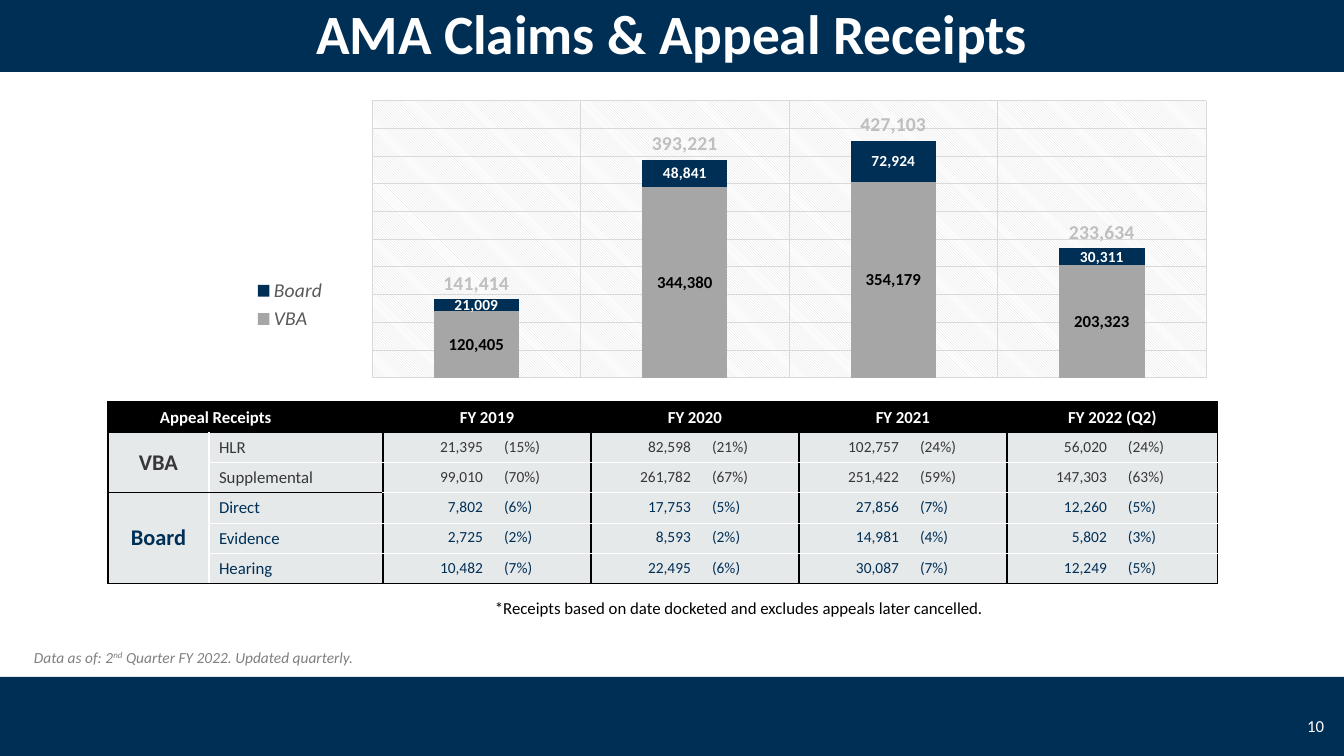
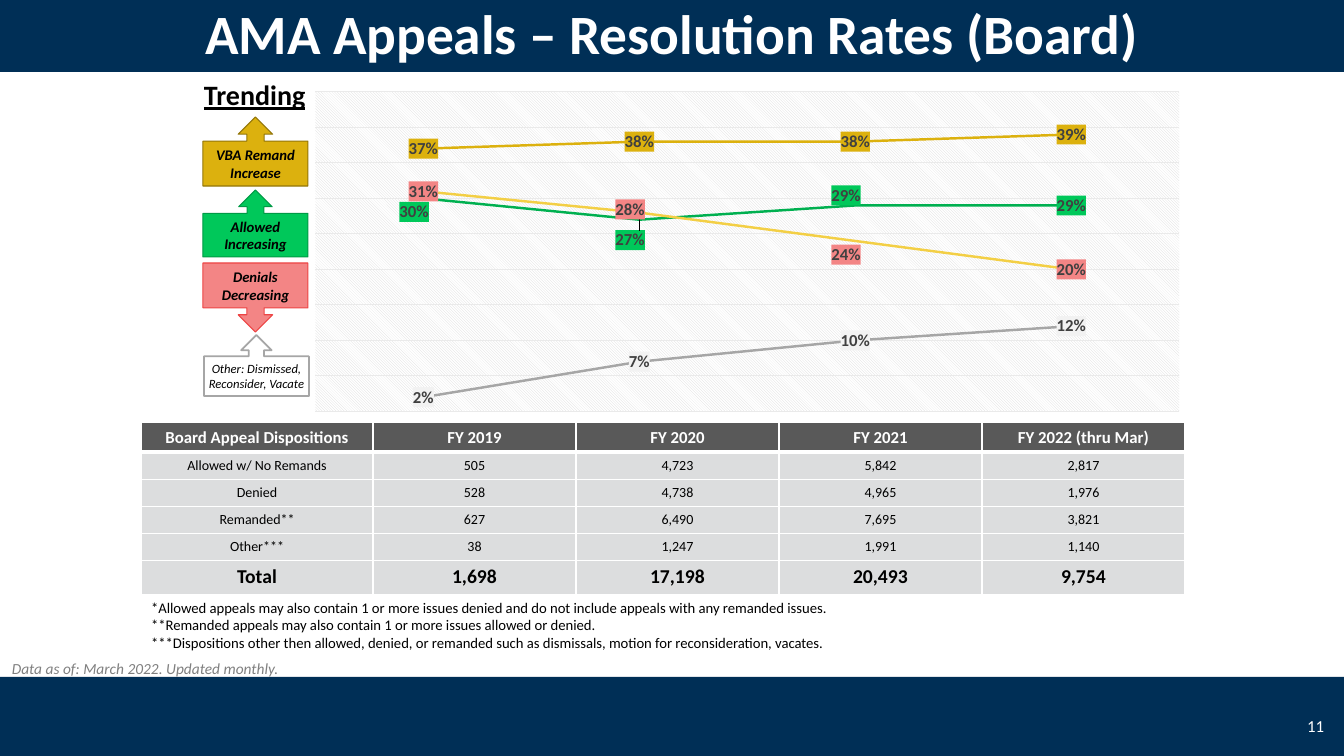
from dataclasses import dataclass
from typing import NamedTuple

from pptx import Presentation
from pptx import util as u
from pptx.chart.data import CategoryChartData
from pptx.dml.color import RGBColor
from pptx.enum import chart as ec, shapes, text
from pptx.oxml import ns, parse_xml

# Shared look
FONT = "Calibri"
NAVY, WHITE, BLACK, GRAY = "002F56", "FFFFFF", "000000", "A6A6A6"
GOLD, GREEN, ROSE = "DCB10E", "00C85A", "F38585"
WIDTH, HEIGHT = 1344, 756
BAND_HEIGHT, BAND_TOPS = 80, (-8, 677)
SCALE = 12192000 / WIDTH
CENTER, LEFT, RIGHT = text.PP_ALIGN.CENTER, text.PP_ALIGN.LEFT, text.PP_ALIGN.RIGHT
MIDDLE = text.MSO_ANCHOR.MIDDLE


class Area(NamedTuple):
    left: int
    top: int
    width: int
    height: int


class Style(NamedTuple):
    size: float
    color: str = BLACK
    bold: bool = False
    italic: bool = False
    underline: bool = False


@dataclass
class Callout:
    area: Area
    label: str
    fill: str
    line: str
    style: Style = Style(10.5, bold=True, italic=True)
    weight: float = 0.75
    down: bool = False


@dataclass
class Series:
    name: str
    values: tuple
    color: str
    label: Style
    label_fill: str = ""
    shifts: tuple = ()  # (point, x, y) as shares of the chart


def px(length: float) -> int:
    return round(length * SCALE)


def place(area: Area) -> list:
    return [px(length) for length in area]


def rgb(color: str) -> RGBColor:
    return RGBColor.from_string(color)


def xml(markup: str):
    head, rest = markup.split(">", 1) if not markup.endswith("/>") else (markup[:-2], "")
    close = ">" if rest else "/>"
    return parse_xml(f"{head} {ns.nsdecls('a', 'c')}{close}{rest}")


def style_font(font, style: Style) -> None:
    font.name, font.size = FONT, u.Pt(style.size)
    font.bold, font.italic = style.bold, style.italic
    font.color.rgb = rgb(style.color)
    if style.underline:
        font.underline = True


def format_text(frame, style: Style, align=LEFT) -> None:
    for para in frame.paragraphs:
        para.alignment = align
        for span in para.runs:
            style_font(span.font, style)


def fill_shape(shape, fill: str, line: str = "", weight: float = 0.75) -> None:
    shape.shadow.inherit = False
    shape.fill.solid()
    shape.fill.fore_color.rgb = rgb(fill)
    if line:
        shape.line.color.rgb, shape.line.width = rgb(line), u.Pt(weight)
    else:
        shape.line.fill.background()


def add_text(page, area: Area, words: str, style: Style, align=LEFT):
    box = page.shapes.add_textbox(*place(area))
    box.text_frame.word_wrap = True
    box.text_frame.text = words
    format_text(box.text_frame, style, align)
    return box


def add_bands(page, layout) -> None:
    for top in BAND_TOPS:
        band = page.shapes.add_shape(shapes.MSO_SHAPE.RECTANGLE,
                                     *place(Area(0, top, WIDTH, BAND_HEIGHT)))
        fill_shape(band, NAVY)
        layout.shapes.element.insert(2, band.element)


def add_page(deck, layout, title: str, number: int):
    page = deck.slides.add_slide(layout)
    head = page.shapes.title
    head.left, head.top, head.width, head.height = place(
        Area(0, BAND_TOPS[0], WIDTH, BAND_HEIGHT))
    head.text_frame.text = title
    head.text_frame.auto_size = text.MSO_AUTO_SIZE.NONE
    head.text_frame.vertical_anchor = MIDDLE
    format_text(head.text_frame, Style(39.6, WHITE, True), CENTER)
    box = add_text(page, Area(1277, 706, 57, 40), str(number), Style(12, WHITE), RIGHT)
    box.text_frame.vertical_anchor = MIDDLE
    return page


# Charts
def manual_layout(x: float, y: float, w: float = 0, h: float = 0, inner: bool = False):
    target = '<c:layoutTarget val="inner"/>' if inner else ""
    modes = '<c:xMode val="edge"/><c:yMode val="edge"/>' if w else ""
    size = f'<c:w val="{w}"/><c:h val="{h}"/>' if w else ""
    return xml(f'<c:layout><c:manualLayout>{target}{modes}<c:x val="{x}"/>'
               f'<c:y val="{y}"/>{size}</c:manualLayout></c:layout>')


def solid(color: str) -> str:
    return f'<a:solidFill><a:srgbClr val="{color}"/></a:solidFill>'


def drop_layout(element) -> None:
    for layout in element.xpath("c:layout"):
        element.remove(layout)


def add_chart(page, kind, area: Area, rows: list, number_format: str, top: float,
              step: float, plot_box: tuple, grid: str):
    data = CategoryChartData(number_format=number_format)
    data.categories = ["1", "2", "3", "4"]
    for row in rows:
        data.add_series(row.name, row.values)
    chart = page.shapes.add_chart(kind, *place(area), data).chart
    chart.has_title = chart.has_legend = False
    style_font(chart.font, Style(10))
    chart.plots[0].vary_by_categories = False
    values = chart.value_axis
    values.minimum_scale, values.maximum_scale, values.major_unit = 0, top, step
    values.major_gridlines.format.line.color.rgb = rgb(grid)
    values.major_gridlines.format.line.width = u.Pt(0.75)
    values.visible = chart.category_axis.visible = False
    plot_area = chart.element.xpath("c:chart/c:plotArea")[0]
    drop_layout(plot_area)
    plot_area.insert(0, manual_layout(*plot_box, inner=True))
    plot_area.append(xml(
        '<c:spPr><a:pattFill prst="ltDnDiag"><a:fgClr><a:srgbClr val="D9D9D9"/></a:fgClr>'
        '<a:bgClr><a:srgbClr val="FFFFFF"/></a:bgClr></a:pattFill></c:spPr>'))
    chart.element.xpath("c:chart")[0].addnext(
        xml(f"<c:spPr>{solid(WHITE)}<a:ln><a:noFill/></a:ln></c:spPr>"))
    for series, row in zip(chart.plots[0].series, rows):
        labels = series.data_labels
        labels.show_value = True
        labels.number_format, labels.number_format_is_linked = number_format, False
        labels.position = ec.XL_LABEL_POSITION.CENTER
        style_font(labels.font, row.label)
    return chart


def add_receipts_chart(page) -> None:
    rows = [
        Series("VBA", (120405, 344380, 354179, 203323), GRAY, Style(12, bold=True)),
        Series("Board", (21009, 48841, 72924, 30311), NAVY, Style(11, WHITE, True)),
        Series("Series 3", (141414, 393221, 427103, 233634), WHITE, Style(14, "BFBFBF", True)),
    ]
    chart = add_chart(page, ec.XL_CHART_TYPE.COLUMN_STACKED, Area(139, 73, 1079, 320), rows,
                      "#,##0", 500000, 50000, (0.216, 0.087, 0.773, 0.866), "D9D9D9")
    bars = chart.plots[0]
    bars.gap_width, bars.overlap = 144, 100
    for series, row in zip(bars.series, rows):
        series.format.fill.solid()
        series.format.fill.fore_color.rgb = rgb(row.color)
    columns = chart.category_axis
    columns.has_major_gridlines = True
    columns.major_gridlines.format.line.color.rgb = rgb("D9D9D9")
    columns.major_gridlines.format.line.width = u.Pt(0.75)

    # Totals become an unseen line that carries the top labels
    bar_chart = chart.element.xpath(".//c:barChart")[0]
    total = bar_chart.xpath("c:ser")[-1]
    for flag in total.xpath("c:invertIfNegative"):
        total.remove(flag)
    line_chart = xml('<c:lineChart><c:grouping val="standard"/><c:varyColors val="0"/>'
                     '<c:marker val="1"/></c:lineChart>')
    line_chart.insert(2, total)
    for axis in bar_chart.xpath("c:axId"):
        line_chart.append(xml(f'<c:axId val="{axis.get("val")}"/>'))
    bar_chart.addnext(line_chart)
    line = chart.plots[1].series[0]
    line.format.line.fill.background()
    line.marker.style = ec.XL_MARKER_STYLE.NONE
    line.smooth = False
    line.data_labels.position = ec.XL_LABEL_POSITION.ABOVE

    # Legend
    chart.has_legend = True
    chart.legend.position = ec.XL_LEGEND_POSITION.LEFT
    chart.legend.include_in_layout = False
    style_font(chart.legend.font, Style(14, "595959", italic=True))
    legend = chart.element.xpath(".//c:legend")[0]
    drop_layout(legend)
    side = legend.xpath("c:legendPos")[0]
    side.addnext(manual_layout(0.1, 0.63, 0.08, 0.19))
    side.addnext(xml('<c:legendEntry><c:idx val="2"/><c:delete val="1"/></c:legendEntry>'))


def add_rates_chart(page) -> None:
    label = Style(12, "404040", True)
    rows = [
        Series("Series 1", (0.37, 0.38, 0.38, 0.39), GOLD, label, GOLD),
        Series("Series 2", (0.3, 0.27, 0.29, 0.29), "00B050", label, GREEN,
               ((0, -0.01, 0.04), (1, -0.01, 0.06), (2, -0.01, -0.03))),
        Series("Series 3", (0.31, 0.28, 0.24, 0.2), "F3CF45", label, ROSE,
               ((1, -0.01, -0.01), (2, -0.01, 0.04))),
        Series("Series 4", (0.02, 0.07, 0.1, 0.12), GRAY, label, "F2F2F2"),
    ]
    chart = add_chart(page, ec.XL_CHART_TYPE.LINE, Area(256, 73, 927, 339), rows, "0%",
                      0.45, 0.05, (0.064, 0.056, 0.932, 0.944), "EAEAEA")
    for series, row, node in zip(chart.plots[0].series, rows, chart.element.xpath(".//c:ser")):
        series.smooth = False
        series.format.line.color.rgb = rgb(row.color)
        series.format.line.width = u.Pt(1.75)
        for point, x, y in row.shifts:
            mark = series.points[point].data_label
            style_font(mark.font, row.label)
            mark.position = ec.XL_LABEL_POSITION.CENTER
            index = node.xpath(f'c:dLbls/c:dLbl/c:idx[@val="{point}"]')[0]
            index.addnext(xml('<c:numFmt formatCode="0%" sourceLinked="0"/>'))
            index.addnext(manual_layout(x, y))
        for words in node.xpath("c:dLbls//c:txPr"):
            words.addprevious(xml(f"<c:spPr>{solid(row.label_fill)}</c:spPr>"))


# Tables
def add_table(page, left: int, top: int, widths: list, heights: list):
    frame = page.shapes.add_table(len(heights), len(widths), *place(
        Area(left, top, sum(widths), sum(heights))))
    table = frame.table
    table.horz_banding = False
    for column, width in zip(table.columns, widths):
        column.width = px(width)
    for row, height in zip(table.rows, heights):
        row.height = px(height)
    return table, frame.element.xpath(".//a:tc")


def fill_cell(cell, words: str, style: Style, align, fill: str) -> None:
    cell.text_frame.text = words
    format_text(cell.text_frame, style, align)
    if fill:
        cell.fill.solid()
        cell.fill.fore_color.rgb = rgb(fill)
    else:
        cell.fill.background()


def edge_cell(node, colors: tuple, bottom: float = 1) -> None:
    """Draw the left, right, top and bottom borders."""
    for spot, (side, color) in enumerate(zip("LRTB", colors)):
        weight = u.Pt(bottom if side == "B" else 1)
        node.xpath("a:tcPr")[0].insert(
            spot, xml(f'<a:ln{side} w="{weight}">{solid(color)}</a:ln{side}>'))


def add_receipts_table(page) -> None:
    rows = [
        ("Appeal Receipts", "", "FY 2019", "FY 2020", "FY 2021", "FY 2022 (Q2)"),
        ("VBA", "HLR", "21,395 (15%)", "82,598 (21%)", "102,757 (24%)", "56,020 (24%)"),
        ("", "Supplemental", "99,010 (70%)", "261,782 (67%)", "251,422 (59%)", "147,303 (63%)"),
        ("Board", "Direct", "7,802 (6%)", "17,753 (5%)", "27,856 (7%)", "12,260 (5%)"),
        ("", "Evidence", "2,725 (2%)", "8,593 (2%)", "14,981 (4%)", "5,802 (3%)"),
        ("", "Hearing", "10,482 (7%)", "22,495 (6%)", "30,087 (7%)", "12,249 (5%)"),
    ]
    table, nodes = add_table(page, 108, 402, [101, 174, 208, 208, 208, 211], [30] * len(rows))
    for first, last, column in ((0, 0, 1), (1, 2, 0), (3, 5, 0)):
        table.cell(first, 0).merge(table.cell(last, column))
    for spot, node in enumerate(nodes):
        row, column = divmod(spot, len(rows[0]))
        cell, words = table.cell(row, column), rows[row][column]
        ink = WHITE if row == 0 else "363739" if row < 3 else NAVY
        size = 12 if row == 0 or column == 1 else 16 if column == 0 else 11
        figures = row > 0 and column > 1
        if figures:
            words = "\t" + words.replace(" ", "\t")
        centered = column != 1 and spot > 0 and not figures
        fill_cell(cell, words, Style(size, ink, row == 0 or column == 0),
                  CENTER if centered else LEFT, "E6E9EA" if row else BLACK)
        if figures:
            node.xpath(".//a:pPr")[0].append(xml(
                f'<a:tabLst><a:tab pos="{px(90)}" algn="r"/><a:tab pos="{px(111)}" algn="l"/>'
                '</a:tabLst>'))
        elif row and column == 0:
            cell.vertical_anchor = MIDDLE
        group = column == 0
        edge_cell(node, (
            WHITE if row and column == 1 else BLACK,
            WHITE if row and group else BLACK,
            BLACK if group or row < 2 or (row == 3 and column == 1) else WHITE,
            BLACK if group or row in (0, 5) or (row == 2 and column == 1) else WHITE))
    table.cell(0, 0).margin_left = px(52)


def add_dispositions_table(page) -> None:
    notes = "\n".join((
        "*Allowed appeals may also contain 1 or more issues denied and do not include appeals "
        "with any remanded issues.",
        "**Remanded appeals may also contain 1 or more issues allowed or denied.",
        "***Dispositions other then allowed, denied, or remanded such as dismissals, motion for "
        "reconsideration, vacates."))
    rows = [
        ("Board Appeal Dispositions", "FY 2019", "FY 2020", "FY 2021", "FY 2022 (thru Mar)"),
        ("Allowed w/ No Remands", "505", "4,723", "5,842", "2,817"),
        ("Denied", "528", "4,738", "4,965", "1,976"),
        ("Remanded**", "627", "6,490", "7,695", "3,821"),
        ("Other***", "38", "1,247", "1,991", "1,140"),
        ("Total", "1,698", "17,198", "20,493", "9,754"),
        (notes, "", "", "", ""),
    ]
    looks = [Style(12, WHITE, True), *[Style(10)] * 4, Style(14, bold=True), Style(10.5)]
    fills = ["595959", *["DCDDDE"] * 5, ""]
    table, nodes = add_table(page, 141, 422, [232] + [203] * 4, [30, 27, 27, 27, 27, 34, 51])
    table.cell(6, 0).merge(table.cell(6, 4))
    for spot, node in enumerate(nodes):
        row, column = divmod(spot, len(rows[0]))
        fill_cell(table.cell(row, column), rows[row][column], looks[row],
                  CENTER if row < 6 else LEFT, fills[row])
        edge_cell(node, (WHITE,) * 4, 3 if row == 0 else 1)


def add_callout(page, item: Callout) -> None:
    kinds = shapes.MSO_SHAPE
    kind = kinds.DOWN_ARROW_CALLOUT if item.down else kinds.UP_ARROW_CALLOUT
    shape = page.shapes.add_shape(kind, *place(item.area))
    fill_shape(shape, item.fill, item.line, item.weight)
    frame = shape.text_frame
    frame.text, frame.word_wrap, frame.vertical_anchor = item.label, False, MIDDLE
    frame.margin_top = frame.margin_bottom = 0
    format_text(frame, item.style, CENTER)


def main() -> None:
    deck = Presentation()
    deck.slide_width, deck.slide_height = px(WIDTH), px(HEIGHT)
    layout = deck.slide_layouts[5]
    note = Style(11, "808080", italic=True)

    # Receipts
    page = add_page(deck, layout, "AMA Claims & Appeal Receipts", 10)
    add_bands(page, layout)
    add_receipts_chart(page)
    add_receipts_table(page)
    add_text(page, Area(485, 593, 530, 30),
             "*Receipts based on date docketed and excludes appeals later cancelled.", Style(12))
    box = add_text(page, Area(24, 643, 380, 29), "Data as of: 2", note)
    for words in ("nd", " Quarter FY 2022. Updated quarterly."):
        box.text_frame.paragraphs[0].add_run().text = words
    format_text(box.text_frame, note)
    box.element.xpath(".//a:rPr")[1].set("baseline", "30000")

    # Resolution rates
    page = add_page(deck, layout, "AMA Appeals – Resolution Rates (Board)", 11)
    add_rates_chart(page)
    add_dispositions_table(page)
    for item in (
        Callout(Area(203, 117, 105, 69), "VBA Remand\nIncrease", GOLD, "937609"),
        Callout(Area(203, 190, 105, 67), "Allowed\nIncreasing", GREEN, "009A46"),
        Callout(Area(203, 263, 105, 69), "Denials\nDecreasing", ROSE, "ED4545", down=True),
        Callout(Area(204, 335, 105, 61), "Other: Dismissed,\nReconsider, Vacate", WHITE, GRAY,
                Style(9, italic=True), 1.25),
    ):
        add_callout(page, item)
    add_text(page, Area(2, 654, 310, 29), "Data as of: March 2022. Updated monthly.", note)
    add_text(page, Area(194, 73, 130, 44), "Trending", Style(20, bold=True, underline=True))
    deck.save("out.pptx")


if __name__ == "__main__":
    main()
